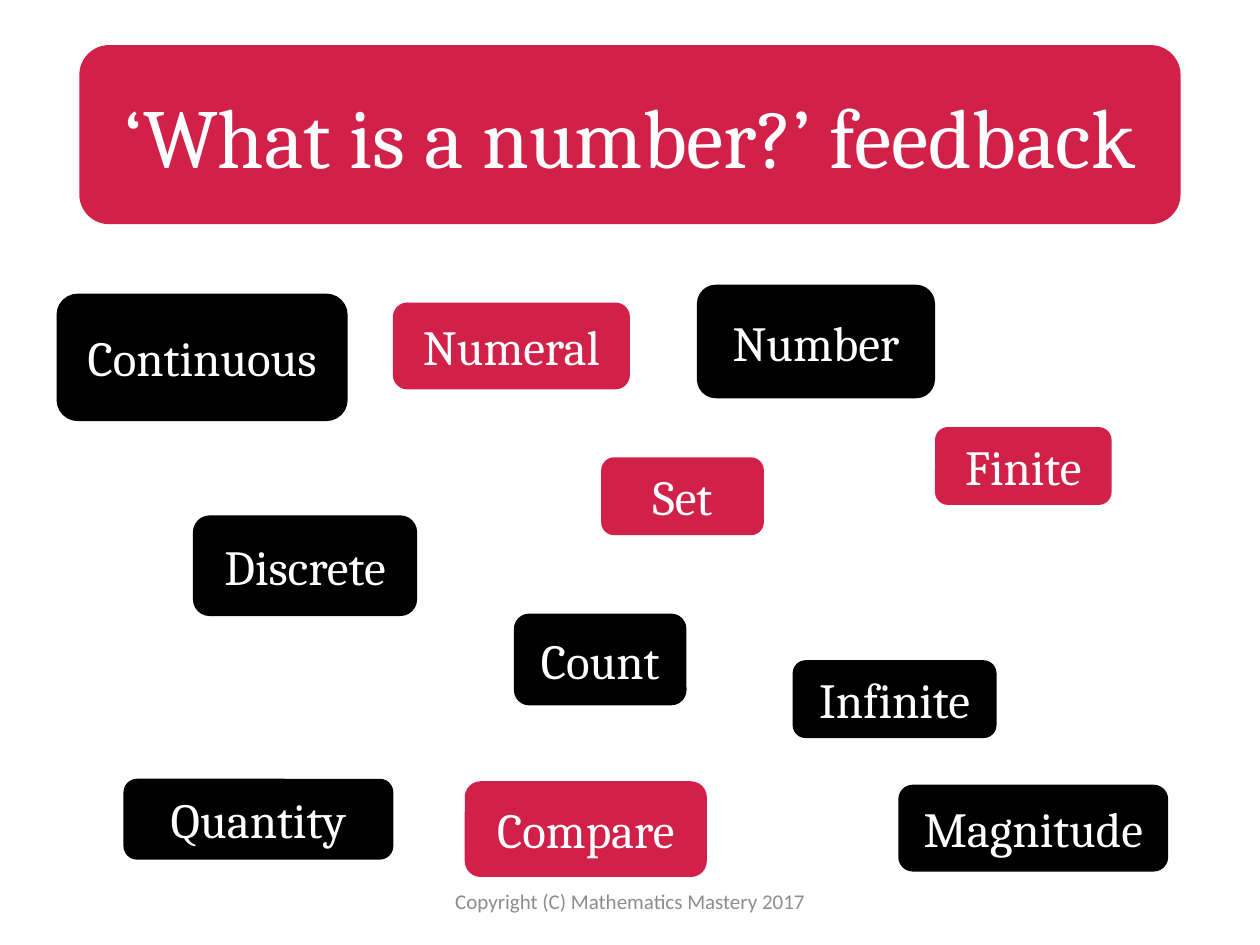
from dataclasses import dataclass

from pptx import Presentation
from pptx.dml.color import RGBColor
from pptx.enum.shapes import MSO_SHAPE as Shape
from pptx.enum.text import MSO_ANCHOR as Anchor, MSO_AUTO_SIZE as AutoSize, PP_ALIGN as Align
from pptx.util import Cm, Pt


@dataclass(frozen=True)
class Theme:
    """Colours, fonts and type sizes of the slide."""
    red: str = "D12149"
    black: str = "000000"
    white: str = "FFFFFF"
    grey: str = "8C8C8C"
    serif: str = "Cambria"
    sans: str = "Calibri"
    title: int = 48
    word: int = 28
    footer: int = 12


THEME = Theme()

TITLE_BOX = (1.6, 0.91, 22.2, 3.61)
FOOTER_BOX = (8.41, 17.65, 8.59, 1.02)

WORDS = [
    ("Number", THEME.black, (14.05, 5.74, 4.8, 2.29)),
    ("Discrete", THEME.black, (3.89, 10.39, 4.52, 2.03)),
    ("Numeral", THEME.red, (7.92, 6.1, 4.78, 1.75)),
    ("Continuous", THEME.black, (1.14, 5.92, 5.87, 2.57)),
    ("Quantity", THEME.black, (2.49, 15.7, 5.44, 1.63)),
    ("Count", THEME.black, (10.36, 12.37, 3.48, 1.85)),
    ("Compare", THEME.red, (9.37, 15.75, 4.88, 1.93)),
    ("Set", THEME.red, (12.12, 9.22, 3.28, 1.57)),
    ("Magnitude", THEME.black, (18.11, 15.82, 5.44, 1.75)),
    ("Finite", THEME.red, (18.85, 8.61, 3.56, 1.57)),
    ("Infinite", THEME.black, (15.98, 13.31, 4.11, 1.57)),
]


def set_text(sp, text, *, size, color=THEME.white, font=THEME.serif):
    """Write one centred line of formatted text into a shape."""
    tf = sp.text_frame
    tf.word_wrap = True
    tf.auto_size = AutoSize.NONE
    tf.vertical_anchor = Anchor.MIDDLE
    p = tf.paragraphs[0]
    p.alignment = Align.CENTER
    r = p.add_run()
    r.text = text
    r.font.name = font
    r.font.size = Pt(size)
    r.font.color.rgb = RGBColor.from_string(color)


class SlideBuilder:
    """Holds the theme and the current slide and adds elements to it."""

    def __init__(self, s, theme):
        self.s = s
        self.theme = theme

    def panel(self, box, color):
        """Add a plain rounded rectangle."""
        sp = self.s.shapes.add_shape(Shape.ROUNDED_RECTANGLE, *map(Cm, box))
        sp.shadow.inherit = False
        sp.fill.solid()
        sp.fill.fore_color.rgb = RGBColor.from_string(color)
        sp.line.fill.background()
        return sp

    def title(self, text, box):
        """Place the title placeholder over a red panel."""
        panel = self.panel(box, self.theme.red)
        sp = self.s.shapes.title
        sp.left, sp.top, sp.width, sp.height = map(Cm, box)
        panel._element.addnext(sp._element)
        set_text(sp, text, size=self.theme.title)

    def word(self, text, color, box):
        """Add a vocabulary card."""
        set_text(self.panel(box, color), text, size=self.theme.word)

    def footer(self, text, box):
        """Add the footer line."""
        sp = self.s.shapes.add_textbox(*map(Cm, box))
        set_text(sp, text, size=self.theme.footer, color=self.theme.grey, font=self.theme.sans)


def main():
    """Build the slide and save it."""
    prs = Presentation()
    prs.slide_width, prs.slide_height = Cm(25.4), Cm(19.05)
    builder = SlideBuilder(prs.slides.add_slide(prs.slide_layouts[5]), THEME)
    builder.title("‘What is a number?’ feedback", TITLE_BOX)
    for text, color, box in WORDS:
        builder.word(text, color, box)
    builder.footer("Copyright (C) Mathematics Mastery 2017", FOOTER_BOX)
    prs.save("out.pptx")


if __name__ == "__main__":
    main()
